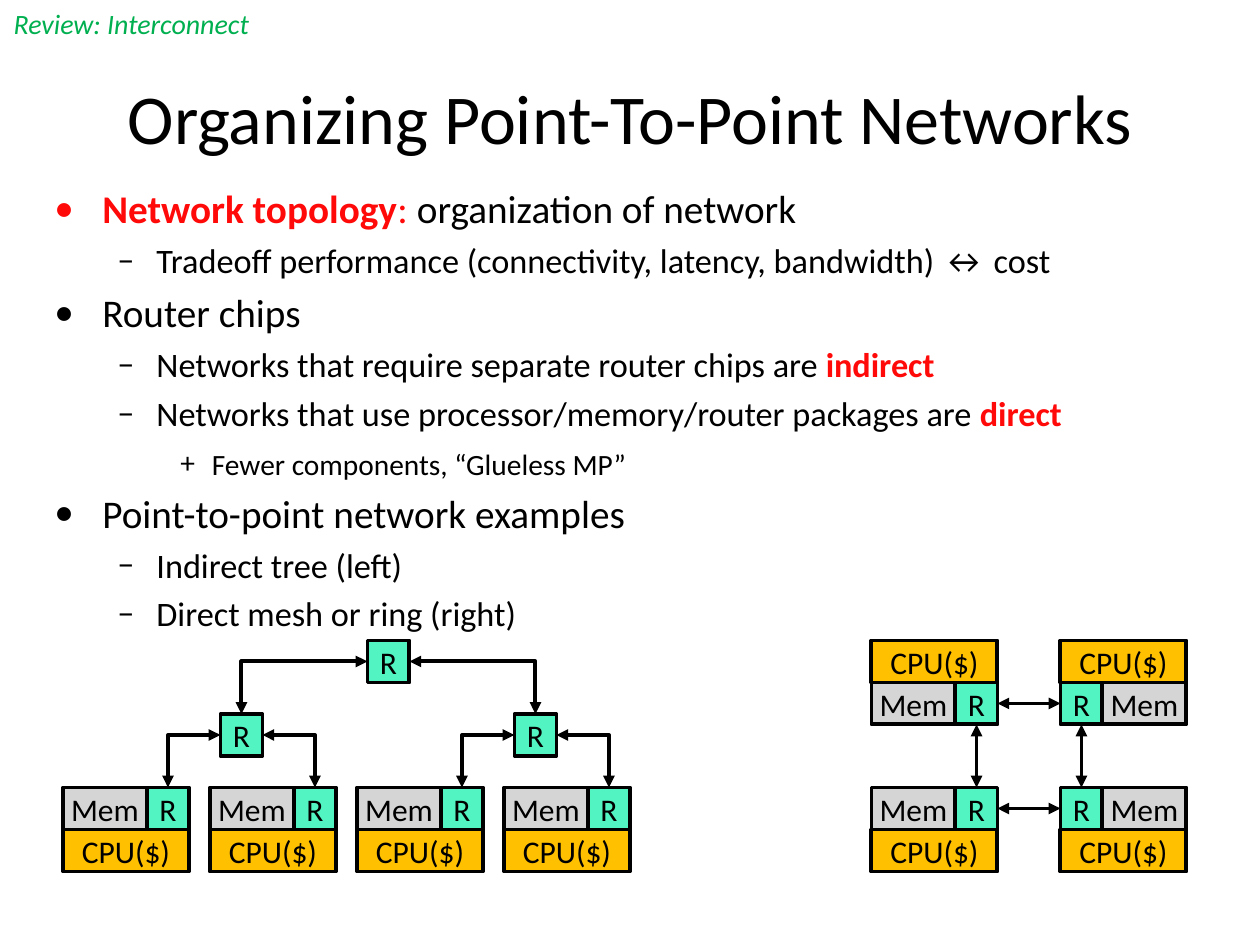
import lxml.etree
import pptx
import pptx.dml.color
import pptx.enum.shapes
import pptx.enum.text
import pptx.oxml.ns
import pptx.util

qn = pptx.oxml.ns.qn
hex_color = pptx.dml.color.RGBColor.from_string
Pt = pptx.util.Pt
BLACK, RED, GREEN = "000000", "FF0909", "00B050"
CPU, MEMORY, ROUTER = "FFC000", "D5D5D5", "52F4C2"

deck = pptx.Presentation()
deck.slide_width = pptx.util.Inches(10)
deck.slide_height = pptx.util.Inches(7.5)
unit = deck.slide_width // 120
slide = deck.slides.add_slide(deck.slide_layouts[6])
shapes = slide.shapes


def write(paragraph, text, size=18, color=BLACK, bold=False, italic=False):
    run = paragraph.add_run()
    run.text = text
    run.font.name = "Calibri"
    run.font.size = Pt(size)
    run.font.color.rgb = hex_color(color)
    run.font.bold = bold
    run.font.italic = italic


def add_part(label, column, row, columns, fill):
    part = shapes.add_shape(pptx.enum.shapes.MSO_SHAPE.RECTANGLE,
                            column * unit, row * unit, columns * unit, 4 * unit)
    part.shadow.inherit = False
    part.fill.solid()
    part.fill.fore_color.rgb = hex_color(fill)
    part.line.color.rgb = hex_color(BLACK)
    part.line.width = Pt(2.25)
    frame = part.text_frame
    frame.word_wrap = False
    frame.vertical_anchor = pptx.enum.text.MSO_ANCHOR.MIDDLE
    frame.paragraphs[0].alignment = pptx.enum.text.PP_ALIGN.CENTER
    write(frame.paragraphs[0], label)
    return part


title = shapes.add_textbox(6 * unit, 3.6 * unit, 108 * unit, 15 * unit).text_frame
title.word_wrap = True
title.vertical_anchor = pptx.enum.text.MSO_ANCHOR.MIDDLE
title.paragraphs[0].alignment = pptx.enum.text.PP_ALIGN.CENTER
write(title.paragraphs[0], "Organizing Point-To-Point Networks", size=40)

section = shapes.add_textbox(0.12 * unit, 0, 25.8 * unit, 4.44 * unit).text_frame
section.word_wrap = False
write(section.paragraphs[0], "Review: Interconnect", size=16, color=GREEN, italic=True)

levels = [("•", 22.4, 0.38, 0.38), ("–", 19.6, 0.81, 0.31), ("+", 16.8, 1.25, 0.25)]
outline = [
    (0, [("Network topology", RED, True), (":", RED, False),
         (" organization of network", BLACK, False)]),
    (1, [("Tradeoff performance (connectivity, latency, bandwidth) ↔ cost", BLACK, False)]),
    (0, [("Router chips", BLACK, False)]),
    (1, [("Networks that require separate router chips are ", BLACK, False),
         ("indirect", RED, True)]),
    (1, [("Networks that use processor/memory/router packages are ", BLACK, False),
         ("direct", RED, True)]),
    (2, [("Fewer components, “Glueless MP”", BLACK, False)]),
    (0, [("Point-to-point network examples", BLACK, False)]),
    (1, [("Indirect tree (left)", BLACK, False)]),
    (1, [("Direct mesh or ring (right)", BLACK, False)]),
]
body = shapes.add_textbox(4 * unit, 17 * unit, 112 * unit, 44 * unit).text_frame
body.word_wrap = True
for index, (level, pieces) in enumerate(outline):
    point = body.add_paragraph() if index else body.paragraphs[0]
    bullet, size, margin, hanging = levels[level]
    point.level = level
    point.space_before = Pt(round(size * 0.2, 1))
    if level:
        point.line_spacing = Pt(24)
    properties = point._p.get_or_add_pPr()
    properties.set("marL", str(pptx.util.Inches(margin)))
    properties.set("indent", str(-pptx.util.Inches(hanging)))
    lxml.etree.SubElement(properties, qn("a:buFont"), typeface="Calibri")
    lxml.etree.SubElement(properties, qn("a:buChar"), char=bullet)
    for text, color, bold in pieces:
        write(point, text, size=size, color=color, bold=bold)

links = []

for column in range(6, 62, 14):
    add_part("CPU($)", column, 79, 12, CPU)
    add_part("Mem", column, 75, 8, MEMORY)
    add_part("R", column + 8, 75, 4, ROUTER)

for column, row, reach in [(21, 68, 7), (49, 68, 7), (35, 61, 14)]:
    add_part("R", column, row, 4, ROUTER)
    for side, child in [(column, column + 2 - reach), (column + 4, column + 2 + reach)]:
        branch = shapes.build_freeform(child, row + 7, scale=unit)
        branch.add_line_segments([(child, row + 2), (side, row + 2)], close=False)
        elbow = branch.convert_to_shape()
        elbow.fill.background()
        links.append(elbow)

mesh = {}
for side, column, memory, router in [("left", 83, 0, 8), ("right", 101, 4, 0)]:
    for level, cpu_row, row in [("top", 61, 65), ("bottom", 79, 75)]:
        add_part("CPU($)", column, cpu_row, 12, CPU)
        add_part("Mem", column + memory, row, 8, MEMORY)
        mesh[level, side] = add_part("R", column + router, row, 4, ROUTER)

for start, start_side, end, end_side in [
    (("top", "left"), 3, ("top", "right"), 1),
    (("bottom", "left"), 3, ("bottom", "right"), 1),
    (("top", "left"), 2, ("bottom", "left"), 0),
    (("top", "right"), 2, ("bottom", "right"), 0),
]:
    channel = shapes.add_connector(pptx.enum.shapes.MSO_CONNECTOR.STRAIGHT, 0, 0, 0, 0)
    channel.begin_connect(mesh[start], start_side)
    channel.end_connect(mesh[end], end_side)
    links.append(channel)

for link in links:
    link.line.color.rgb = hex_color(BLACK)
    link.line.width = Pt(2.25)
    properties = link._element.spPr
    outline_xml = properties.find(qn("a:ln"))
    for tip in ("a:headEnd", "a:tailEnd"):
        lxml.etree.SubElement(outline_xml, qn(tip), type="triangle")
    lxml.etree.SubElement(properties, qn("a:effectLst"))

deck.save("out.pptx")
